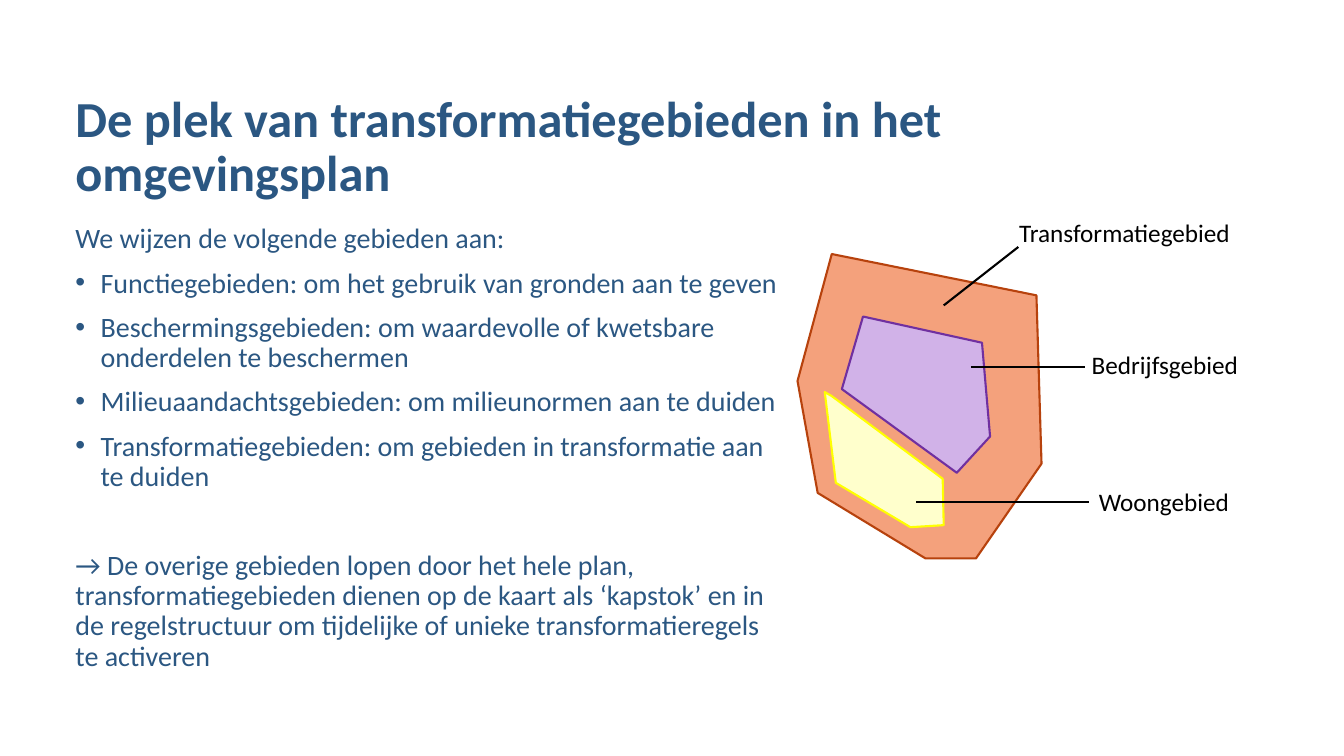
from lxml import etree
from pptx import Presentation
from pptx.dml.color import RGBColor
from pptx.enum.shapes import MSO_CONNECTOR
from pptx.enum.text import MSO_ANCHOR, MSO_AUTO_SIZE
from pptx.oxml.ns import qn
from pptx.util import Inches, Pt

STRAIGHT = MSO_CONNECTOR.STRAIGHT
TOP, BOTTOM = MSO_ANCHOR.TOP, MSO_ANCHOR.BOTTOM
FIT_SHAPE = MSO_AUTO_SIZE.SHAPE_TO_FIT_TEXT
LEFT_SIDE = 1
FONT = "Calibri"
COLORS = {
    "heading": "2B5782", "label": "000000",
    "transform": "F4A17C", "transform_edge": "B7420D",
    "living": "FFFFCC", "living_edge": "FFFF00",
    "business": "D1B2E8", "business_edge": "7030A0",
}

TITLE = "De plek van transformatiegebieden in het omgevingsplan"
INTRO = "We wijzen de volgende gebieden aan:"
AREA_KINDS = [
    "Functiegebieden: om het gebruik van gronden aan te geven",
    "Beschermingsgebieden: om waardevolle of kwetsbare onderdelen te beschermen",
    "Milieuaandachtsgebieden: om milieunormen aan te duiden",
    "Transformatiegebieden: om gebieden in transformatie aan te duiden",
]
CONCLUSION = (
    "→ De overige gebieden lopen door het hele plan, transformatiegebieden dienen "
    "op de kaart als ‘kapstok’ en in de regelstructuur om tijdelijke of unieke "
    "transformatieregels te activeren"
)

# Map geometry in inches, measured from the top left corner of the map
AREAS = [
    ("transform", [(0.34, 0), (2.37, 0.41), (2.42, 2.08), (1.77, 3.02),
                   (1.27, 3.02), (0.2, 2.37), (0, 1.26)]),
    ("living", [(0.27, 1.37), (0.38, 2.27), (1.12, 2.71), (1.45, 2.69),
                (1.44, 2.23), (0.34, 1.41)]),
    ("business", [(1.58, 2.17), (0.44, 1.34), (0.65, 0.62), (1.83, 0.88),
                  (1.91, 1.81)]),
]
# Text, label corner, pointer start, pointer end (None: middle of the label's left side)
LABELS = [
    ("Transformatiegebied", (2.1, -0.41), (1.45, 0.51), (2.19, -0.07)),
    ("Bedrijfsgebied", (2.82, 0.9), (1.72, 1.12), (2.85, 1.12)),
    ("Woongebied", (2.89, 2.26), (1.18, 2.46), None),
]


def rgb(name):
    return RGBColor.from_string(COLORS[name])


def add_text_box(page, box, anchor=TOP):
    shape = page.shapes.add_textbox(*map(Inches, box))
    frame = shape.text_frame
    frame.word_wrap = True
    frame.vertical_anchor = anchor
    return shape


def add_span(para, text, size, color, bold=False):
    span = para.add_run()
    span.text = text
    span.font.name = FONT
    span.font.size = Pt(size)
    span.font.bold = bold
    span.font.color.rgb = rgb(color)


def add_bullet(para):
    props = para._p.get_or_add_pPr()
    props.set("marL", str(Inches(0.25)))
    props.set("indent", str(-Inches(0.25)))
    font = etree.SubElement(props, qn("a:buFont"))
    font.set("typeface", "Arial")
    etree.SubElement(props, qn("a:buChar")).set("char", "•")


def add_title(page, box):
    para = add_text_box(page, box, BOTTOM).text_frame.paragraphs[0]
    para.line_spacing = 0.9
    add_span(para, TITLE, 36, "heading", bold=True)


def add_body(page, box):
    """Intro, bulleted kinds of area, and a conclusion set apart by a wide gap."""
    frame = add_text_box(page, box).text_frame
    rows = [(INTRO, 0, False)]
    rows += [(kind, 10, True) for kind in AREA_KINDS]
    rows.append((CONCLUSION, 42, False))
    for index, (text, space, bulleted) in enumerate(rows):
        para = frame.add_paragraph() if index else frame.paragraphs[0]
        para.line_spacing = 0.9
        para.space_before = Pt(space)
        if bulleted:
            add_bullet(para)
        add_span(para, text, 20, "heading")


def add_area(page, name, points):
    corners = [(Inches(x), Inches(y)) for x, y in points]
    builder = page.shapes.build_freeform(*corners[0])
    builder.add_line_segments(corners[1:], close=True)
    shape = builder.convert_to_shape()
    shape.shadow.inherit = False
    shape.fill.solid()
    shape.fill.fore_color.rgb = rgb(name)
    shape.line.color.rgb = rgb(name + "_edge")
    shape.line.width = Pt(1.5)


def add_label(page, text, corner):
    label = add_text_box(page, (*corner, 2.5, 0.4))
    label.text_frame.auto_size = FIT_SHAPE
    add_span(label.text_frame.paragraphs[0], text, 18, "label")
    return label


def add_pointer(page, start, end, label):
    target = end or start
    line = page.shapes.add_connector(STRAIGHT, *map(Inches, (*start, *target)))
    if end is None:
        line.end_connect(label, LEFT_SIDE)
    line.line.color.rgb = rgb("label")
    line.line.width = Pt(1.5)
    etree.SubElement(line._element.spPr, qn("a:effectLst"))


def add_map(page, left, top):
    """Nested areas, each with a label and a pointer."""
    def place(point):
        return left + point[0], top + point[1]

    for name, points in AREAS:
        add_area(page, name, [place(point) for point in points])
    for text, corner, start, end in LABELS:
        label = add_label(page, text, place(corner))
        add_pointer(page, place(start), end and place(end), label)


def main():
    deck = Presentation()
    deck.slide_width, deck.slide_height = Inches(13.33), Inches(7.5)
    page = deck.slides.add_slide(deck.slide_layouts[6])
    add_title(page, (0.65, 1.08, 11.5, 0.98))
    add_body(page, (0.65, 2.18, 7.17, 4.24))
    add_map(page, 7.91, 2.52)
    deck.save("out.pptx")


if __name__ == "__main__":
    main()
